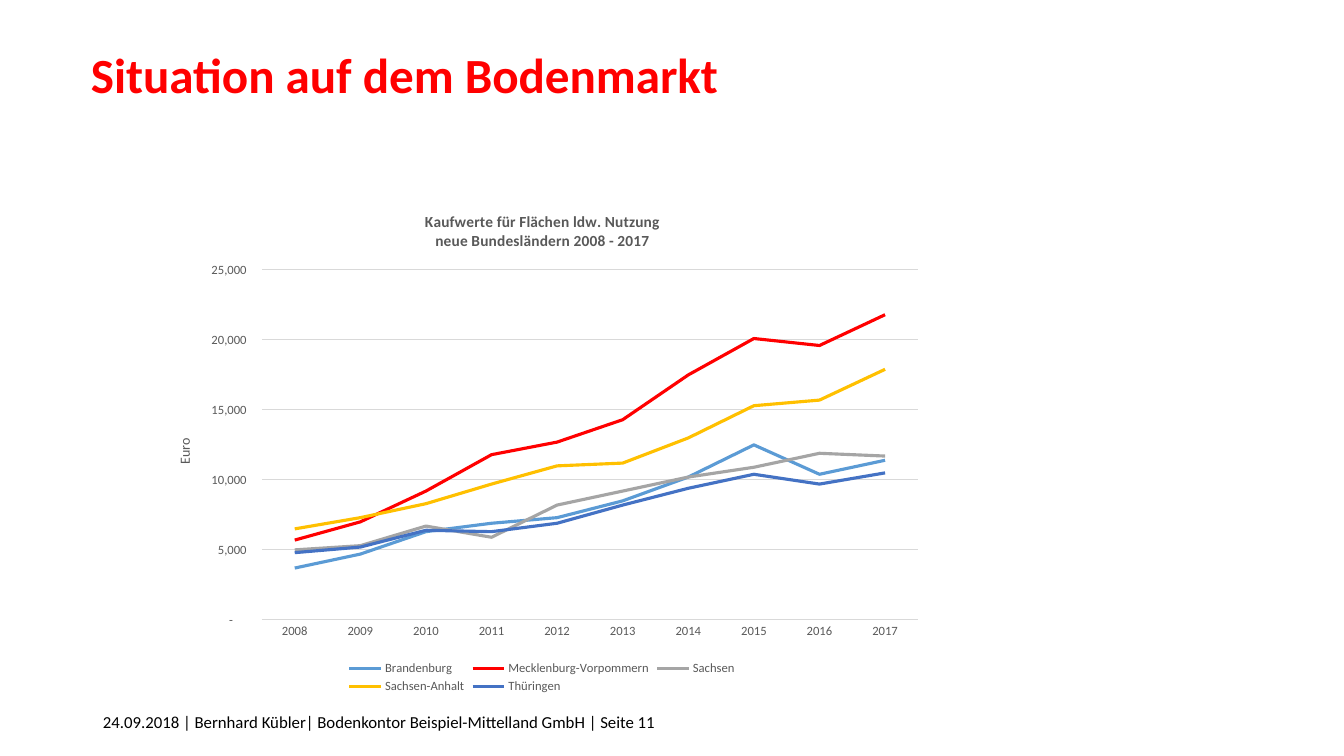
import lxml.etree
import pptx
import pptx.chart.data
import pptx.dml.color
import pptx.enum.chart
import pptx.enum.text
import pptx.util
from dataclasses import dataclass

CHART = pptx.enum.chart
CHART_NAMESPACE = "http://schemas.openxmlformats.org/drawingml/2006/chart"
EMU_PER_PX = 914400 / 100.8


@dataclass(frozen=True)
class Theme:
    font: str = "Calibri"
    title_color: str = "FF0000"
    text_color: str = "000000"
    chart_text: str = "595959"
    grid: str = "D9D9D9"
    title_size: float = 35.1
    footer_size: int = 12
    chart_title_size: int = 11
    axis_title_size: int = 10
    label_size: int = 9
    line_width: float = 2.25
    grid_width: float = 0.75


YEARS = [str(year) for year in range(2008, 2018)]
LAND_PRICES = {
    "Brandenburg": ("5B9BD5", [3700, 4700, 6300, 6900, 7300, 8500, 10200, 12500, 10400, 11400]),
    "Mecklenburg-Vorpommern": ("FF0000", [5700, 7000, 9200, 11800, 12700, 14300, 17500, 20100, 19600, 21800]),
    "Sachsen": ("A5A5A5", [5000, 5300, 6700, 5900, 8200, 9200, 10200, 10900, 11900, 11700]),
    "Sachsen-Anhalt": ("FFC000", [6500, 7300, 8300, 9700, 11000, 11200, 13000, 15300, 15700, 17900]),
    "Thüringen": ("4472C4", [4800, 5200, 6400, 6300, 6900, 8200, 9400, 10400, 9700, 10500]),
}
EURO_FORMAT = r'_-* #,##0\ _€_-;\-* #,##0\ _€_-;_-* "-"??\ _€_-'


def px(length):
    return pptx.util.Emu(round(length * EMU_PER_PX))


def rgb(value):
    return pptx.dml.color.RGBColor.from_string(value)


def set_values(target, values):
    for name, value in values.items():
        setattr(target, name, value)


class SlideBuilder:
    def __init__(self, presentation, theme):
        self.theme = theme
        self.slide = presentation.slides.add_slide(presentation.slide_layouts[6])

    def style_font(self, font, size, color, bold=False):
        set_values(font, {"name": self.theme.font, "size": pptx.util.Pt(size), "bold": bold})
        font.color.rgb = rgb(color)

    def style_line(self, line, color, width):
        line.color.rgb = rgb(color)
        line.width = pptx.util.Pt(width)

    def add_text(self, box, text, size, color, bold=False, **frame_values):
        shape = self.slide.shapes.add_textbox(*map(px, box))
        set_values(shape.text_frame, {"word_wrap": True, **frame_values})
        paragraph = shape.text_frame.paragraphs[0]
        paragraph.text = text
        self.style_font(paragraph.font, size, color, bold)
        return paragraph

    def add_line_chart(self, box, categories, series_data):
        data = pptx.chart.data.CategoryChartData()
        data.categories = categories
        for name, (_, values) in series_data.items():
            data.add_series(name, values)
        frame = self.slide.shapes.add_chart(CHART.XL_CHART_TYPE.LINE, *map(px, box), data)
        chart = frame.chart
        self.style_font(chart.font, self.theme.axis_title_size, self.theme.text_color)
        chart.plots[0].vary_by_categories = False
        for series, (color, _) in zip(chart.plots[0].series, series_data.values()):
            series.smooth = False
            series.marker.style = CHART.XL_MARKER_STYLE.NONE
            self.style_line(series.format.line, color, self.theme.line_width)
        return chart

    def add_chart_title(self, owner, lines, size, bold=False):
        title = owner.chart_title if hasattr(owner, "chart_title") else owner.axis_title
        title.text_frame.text = "\n".join(lines)
        for paragraph in title.text_frame.paragraphs:
            self.style_font(paragraph.font, size, self.theme.chart_text, bold)
        return title

    def style_axis(self, axis, **values):
        none = CHART.XL_TICK_MARK.NONE
        set_values(axis, {"major_tick_mark": none, "minor_tick_mark": none, **values})
        self.style_font(axis.tick_labels.font, self.theme.label_size, self.theme.chart_text)

    def place(self, element, index, chart_box, left, top, width=None, height=None):
        """Fix a chart part at px offsets from the chart's top left corner."""
        def add(parent, tag, **attributes):
            return lxml.etree.SubElement(parent, f"{{{CHART_NAMESPACE}}}{tag}", attributes)

        for old_layout in element.findall(f"{{{CHART_NAMESPACE}}}layout"):
            element.remove(old_layout)
        layout = add(element, "layout")
        element.insert(index, layout)
        manual = add(layout, "manualLayout")
        if width:
            add(manual, "layoutTarget", val="inner")
        add(manual, "xMode", val="edge")
        add(manual, "yMode", val="edge")
        lengths = {"x": (left, 2), "y": (top, 3), "w": (width, 2), "h": (height, 3)}
        for tag, (length, side) in lengths.items():
            if length is not None:
                add(manual, tag, val=f"{length / chart_box[side]:.4f}")


def main():
    theme = Theme()
    presentation = pptx.Presentation()
    set_values(presentation, {"slide_width": px(1344), "slide_height": px(756)})
    builder = SlideBuilder(presentation, theme)

    # Footer and heading
    builder.add_text((93, 707, 651, 40),
                     "24.09.2018 | Bernhard Kübler| Bodenkontor Beispiel-Mittelland GmbH | Seite 11",
                     theme.footer_size, theme.text_color)
    heading = builder.add_text((81, 43, 1159, 70), "Situation auf dem Bodenmarkt",
                               theme.title_size, theme.title_color, True,
                               vertical_anchor=pptx.enum.text.MSO_ANCHOR.MIDDLE)
    heading.line_spacing = 0.9

    # Line chart of land prices
    chart_box = (151, 188, 782, 510)
    chart = builder.add_line_chart(chart_box, YEARS, LAND_PRICES)
    chart.has_title = True
    chart_title = builder.add_chart_title(
        chart, ["Kaufwerte für Flächen ldw. Nutzung", "neue Bundesländern 2008 - 2017"],
        theme.chart_title_size, True)
    builder.place(chart_title._element, 1, chart_box, 271, 20)
    plot_area = chart._chartSpace.chart.plotArea
    builder.place(plot_area, 0, chart_box, 111, 82, 656, 350)

    # Axes
    builder.style_axis(chart.category_axis)
    builder.style_line(chart.category_axis.format.line, theme.grid, theme.grid_width)
    value_axis = chart.value_axis
    builder.style_axis(value_axis, minimum_scale=0, maximum_scale=25000, major_unit=5000,
                       has_major_gridlines=True)
    value_axis.format.line.fill.background()
    builder.style_line(value_axis.major_gridlines.format.line, theme.grid, theme.grid_width)
    set_values(value_axis.tick_labels,
               {"number_format": EURO_FORMAT, "number_format_is_linked": False})
    axis_title = builder.add_chart_title(value_axis, ["Euro"], theme.axis_title_size)
    body = axis_title.text_frame._txBody.bodyPr
    body.set("rot", "-5400000")
    body.set("vert", "horz")
    builder.place(axis_title._element, 1, chart_box, 22, 248)

    # Legend
    chart.has_legend = True
    set_values(chart.legend, {"position": CHART.XL_LEGEND_POSITION.BOTTOM,
                              "include_in_layout": False})
    builder.style_font(chart.legend.font, theme.label_size, theme.chart_text)
    builder.place(chart.legend._element, 1, chart_box, 194, 469, 394, 41)

    presentation.save("out.pptx")


if __name__ == "__main__":
    main()
